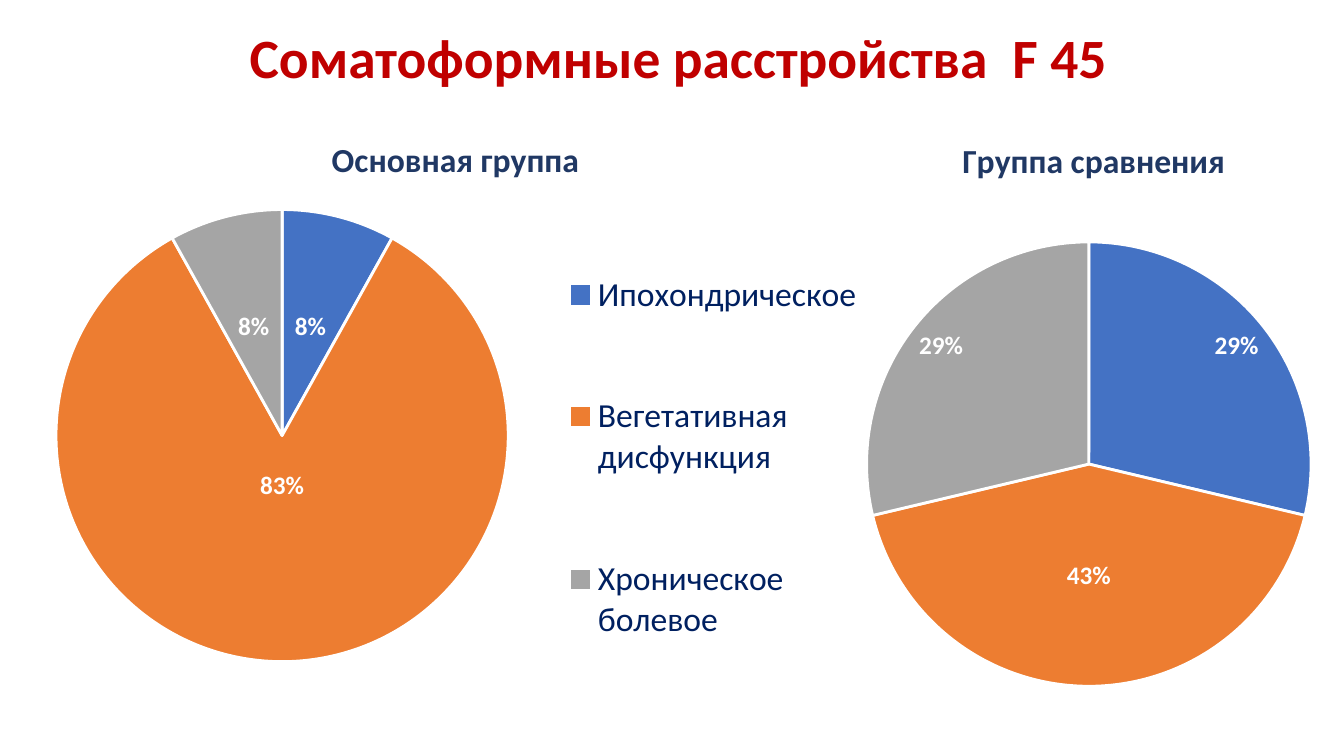
from lxml import etree
from pptx import Presentation
from pptx.chart.data import CategoryChartData as ChartData
from pptx.dml.color import RGBColor as RGB
from pptx.enum.chart import XL_CHART_TYPE as Kind
from pptx.enum.chart import XL_LABEL_POSITION as Pos
from pptx.enum.chart import XL_LEGEND_POSITION as Side
from pptx.enum.text import MSO_ANCHOR as Anchor
from pptx.enum.text import PP_ALIGN as Align
from pptx.oxml.ns import qn
from pptx.util import Inches, Pt

RED = RGB(0xC0, 0x00, 0x00)
NAVY = RGB(0x00, 0x20, 0x60)
BLUE = RGB(0x20, 0x38, 0x64)
WHITE = RGB(0xFF, 0xFF, 0xFF)
SLICES = RGB(0x44, 0x72, 0xC4), RGB(0xED, 0x7D, 0x31), RGB(0xA5, 0xA5, 0xA5)
FACE = "Calibri"
PERCENT = '0"%"'

TITLE = "Соматоформные расстройства  F 45"
TYPES = ["Ипохондрическое", "Вегетативная дисфункция", "Хроническое болевое"]
# Boxes are in inches; head, plot, legend and shift are shares of the chart.
PIES = [
    dict(head="Основная группа", values=(8, 83, 8), box=(0.12, 1.02, 8.64, 6.23),
         head_at=(0.36, 0.045), plot=(0.03, 0.17, 0.56, 0.72),
         legend=(0.62, 0.145, 0.37, 0.84), spots=(Pos.CENTER,) * 3, shift=-0.1),
    dict(head="Группа сравнения", values=(29, 43, 29), box=(8.45, 1.02, 4.7, 6.39),
         head_at=(0.22, 0.045), plot=(0.03, 0.216, 0.94, 0.69), legend=None,
         spots=(Pos.INSIDE_END, Pos.CENTER, Pos.INSIDE_END), shift=0),
]


def style(font, size, color, bold=False):
    font.name, font.size, font.bold = FACE, Pt(size), bold
    font.color.rgb = color


def place(parent, index, shares, inner=False, edge=True):
    """Put a manual layout into a chart part at the given child index."""
    for old in parent.findall(qn("c:layout")):
        parent.remove(old)
    layout = etree.Element(qn("c:layout"))
    manual = etree.SubElement(layout, qn("c:manualLayout"))
    rules = [("layoutTarget", "inner")] if inner else []
    if edge:
        rules += [("xMode", "edge"), ("yMode", "edge")]
    for tag, val in rules + list(zip("xywh", shares)):
        etree.SubElement(manual, qn("c:" + tag)).set("val", str(val))
    parent.insert(index, layout)


def add_pie(slide, pie):
    data = ChartData(number_format=PERCENT)
    data.categories = TYPES
    data.add_series(pie["head"], pie["values"])
    box = [Inches(n) for n in pie["box"]]
    chart = slide.shapes.add_chart(Kind.PIE, *box, data).chart
    chart.font.name, chart.font.size = FACE, Pt(10)

    head = chart.chart_title.text_frame.paragraphs[0]
    head.text = pie["head"]
    style(head.font, 24, BLUE, True)
    place(chart.chart_title._element, 1, pie["head_at"])

    chart.has_legend = bool(pie["legend"])
    if chart.has_legend:
        legend = chart.legend
        legend.position = Side.RIGHT
        legend.include_in_layout = False
        style(legend.font, 24, NAVY)
        place(legend._element, 1, pie["legend"])

    plot = chart.plots[0]
    plot.vary_by_categories = True
    area = chart._chartSpace.find(".//" + qn("c:plotArea"))
    place(area, 0, pie["plot"], inner=True)
    plot.has_data_labels = True
    labels = plot.data_labels
    labels.show_value = True
    labels.number_format = PERCENT
    labels.number_format_is_linked = False
    style(labels.font, 18, WHITE, True)

    series = plot.series[0]
    for i, (color, spot) in enumerate(zip(SLICES, pie["spots"])):
        point = series.points[i]
        point.format.fill.solid()
        point.format.fill.fore_color.rgb = color
        point.format.line.color.rgb = WHITE
        point.format.line.width = Pt(2)
        label = point.data_label
        label.position = spot
        style(label.font, 18, WHITE, True)
    tags = series._element.findall(".//" + qn("c:dLbl"))
    for i, tag in enumerate(tags):
        form = etree.Element(qn("c:numFmt"), formatCode=PERCENT, sourceLinked="0")
        tag.insert(1, form)
        if i == 1 and pie["shift"]:
            place(tag, 1, (0, pie["shift"]), edge=False)


def main():
    deck = Presentation()
    deck.slide_width, deck.slide_height = Inches(13.33), Inches(7.5)
    slide = deck.slides.add_slide(deck.slide_layouts[5])
    title = slide.shapes.title
    title.left, title.top = Inches(0.98), Inches(0.25)
    title.width, title.height = Inches(11.5), Inches(0.7)
    frame = title.text_frame
    frame.text = TITLE
    frame.vertical_anchor = Anchor.MIDDLE
    para = frame.paragraphs[0]
    para.alignment, para.line_spacing = Align.CENTER, 0.9
    style(para.font, 39.6, RED, True)
    for pie in PIES:
        add_pie(slide, pie)
    deck.save("out.pptx")


if __name__ == "__main__":
    main()
